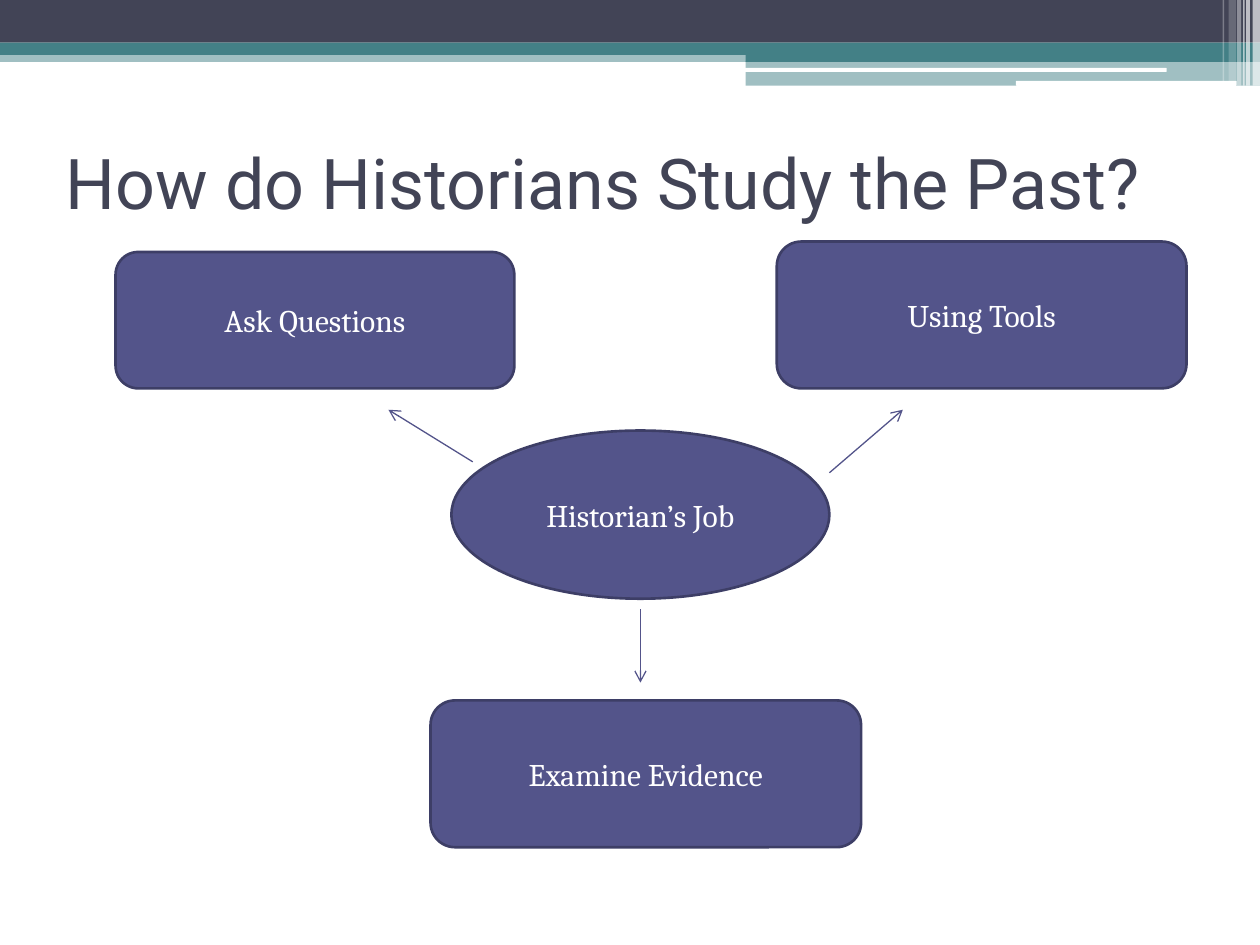
from lxml.etree import SubElement
from pptx import Presentation
from pptx.dml.color import RGBColor
from pptx.enum.shapes import MSO_CONNECTOR as Connector, MSO_SHAPE as Shape
from pptx.enum.text import MSO_ANCHOR as Anchor, PP_ALIGN as Align
from pptx.oxml.ns import qn
from pptx.util import Cm, Pt

COLORS = {
    "slate": "424456",
    "teal": "438086",
    "white": "FFFFFF",
    "indigo": "53548A",
    "outline": "3D3E66",
}

TITLE_FONT = {"name": "Roboto", "size": Pt(40)}
LABEL_FONT = {"name": "Cambria", "size": Pt(18)}
FRAME_FORMAT = {"word_wrap": True, "vertical_anchor": Anchor.MIDDLE}

# Header bands: kind, left, top, width, height (cm), colour, opacity in percent
BANDS = [
    (Shape.RECTANGLE, 0, 1.02, 25.4, 0.23, "teal", 50),
    (Shape.RECTANGLE, 0, 0, 25.4, 0.86, "slate", 100),
    (Shape.RECTANGLE, 0, 0.86, 25.4, 0.25, "teal", 100),
    (Shape.RECTANGLE, 15.03, 1, 10.37, 0.25, "teal", 100),
    (Shape.RECTANGLE, 15.03, 1.23, 10.37, 0.5, "teal", 50),
    (Shape.ROUNDED_RECTANGLE, 15.01, 1.37, 8.51, 0.08, "white", 100),
    (Shape.ROUNDED_RECTANGLE, 20.48, 1.63, 4.45, 0.1, "white", 100),
]

# White stripes at the right edge: left, width, height (cm), opacity
STRIPES = [
    (25.25, 0.15, 1.73, 65),
    (25.12, 0.08, 1.73, 65),
    (25.06, 0.03, 1.73, 60),
    (24.94, 0.08, 1.73, 40),
    (24.77, 0.15, 1.63, 20),
    (24.65, 0.03, 1.63, 30),
]

# Diagram nodes: kind, label, left, top, width, height (cm)
NODES = [
    (Shape.OVAL, "Historian’s Job", 9.1, 8.68, 7.62, 3.39),
    (Shape.ROUNDED_RECTANGLE, "Ask Questions", 2.33, 5.08, 8.04, 2.75),
    (Shape.ROUNDED_RECTANGLE, "Using Tools", 15.66, 4.87, 8.26, 2.96),
    (Shape.ROUNDED_RECTANGLE, "Examine Evidence", 8.68, 14.12, 8.68, 2.96),
]

# Arrows from the centre to each task: start x, y, end x, y (cm)
ARROWS = [
    (9.53, 9.31, 7.83, 8.26),
    (16.72, 9.53, 18.2, 8.26),
    (12.91, 12.28, 12.91, 13.76),
]


def rgb(color):
    return RGBColor.from_string(COLORS[color])


def apply_format(target, values):
    for attribute, value in values.items():
        setattr(target, attribute, value)


def write_text(shape, text, font, color, align):
    frame = shape.text_frame
    apply_format(frame, FRAME_FORMAT)
    paragraph = frame.paragraphs[0]
    paragraph.alignment = align
    run = paragraph.add_run()
    run.text = text
    apply_format(run.font, font)
    run.font.color.rgb = rgb(color)


def add_filled(slide, kind, box, color, opacity=100):
    shape = slide.shapes.add_shape(kind, *map(Cm, box))
    shape.shadow.inherit = False
    shape.fill.solid()
    shape.fill.fore_color.rgb = rgb(color)
    shape.line.fill.background()
    if opacity < 100:
        fill_color = shape.fill._xPr.find(qn("a:solidFill"))[0]
        SubElement(fill_color, qn("a:alpha"), val=str(opacity * 1000))
    return shape


def add_header(slide):
    for kind, *box, color, opacity in BANDS:
        add_filled(slide, kind, box, color, opacity)
    for left, width, height, opacity in STRIPES:
        add_filled(slide, Shape.RECTANGLE, (left, 0, width, height), "white", opacity)


def add_title(slide, text):
    title = slide.shapes.add_textbox(Cm(1.07), Cm(2.18), Cm(22.86), Cm(2.97))
    write_text(title, text, TITLE_FONT, "slate", Align.LEFT)


def add_node(slide, kind, label, *box):
    node = add_filled(slide, kind, box, "indigo")
    node.line.color.rgb = rgb("outline")
    node.line.width = Pt(1.5)
    write_text(node, label, LABEL_FONT, "white", Align.CENTER)


def add_arrow(slide, *ends):
    arrow = slide.shapes.add_connector(Connector.STRAIGHT, *map(Cm, ends))
    arrow.line.color.rgb = rgb("indigo")
    arrow.line.width = Pt(0.75)
    SubElement(arrow.line._get_or_add_ln(), qn("a:tailEnd"), type="arrow")
    SubElement(arrow._element.spPr, qn("a:effectLst"))


def main():
    deck = Presentation()
    apply_format(deck, {"slide_width": Cm(25.4), "slide_height": Cm(19.05)})
    slide = deck.slides.add_slide(deck.slide_layouts[6])

    # Header and title
    add_header(slide)
    add_title(slide, "How do Historians Study the Past?")

    # Diagram
    for node in NODES:
        add_node(slide, *node)
    for arrow in ARROWS:
        add_arrow(slide, *arrow)

    deck.save("out.pptx")


if __name__ == "__main__":
    main()
